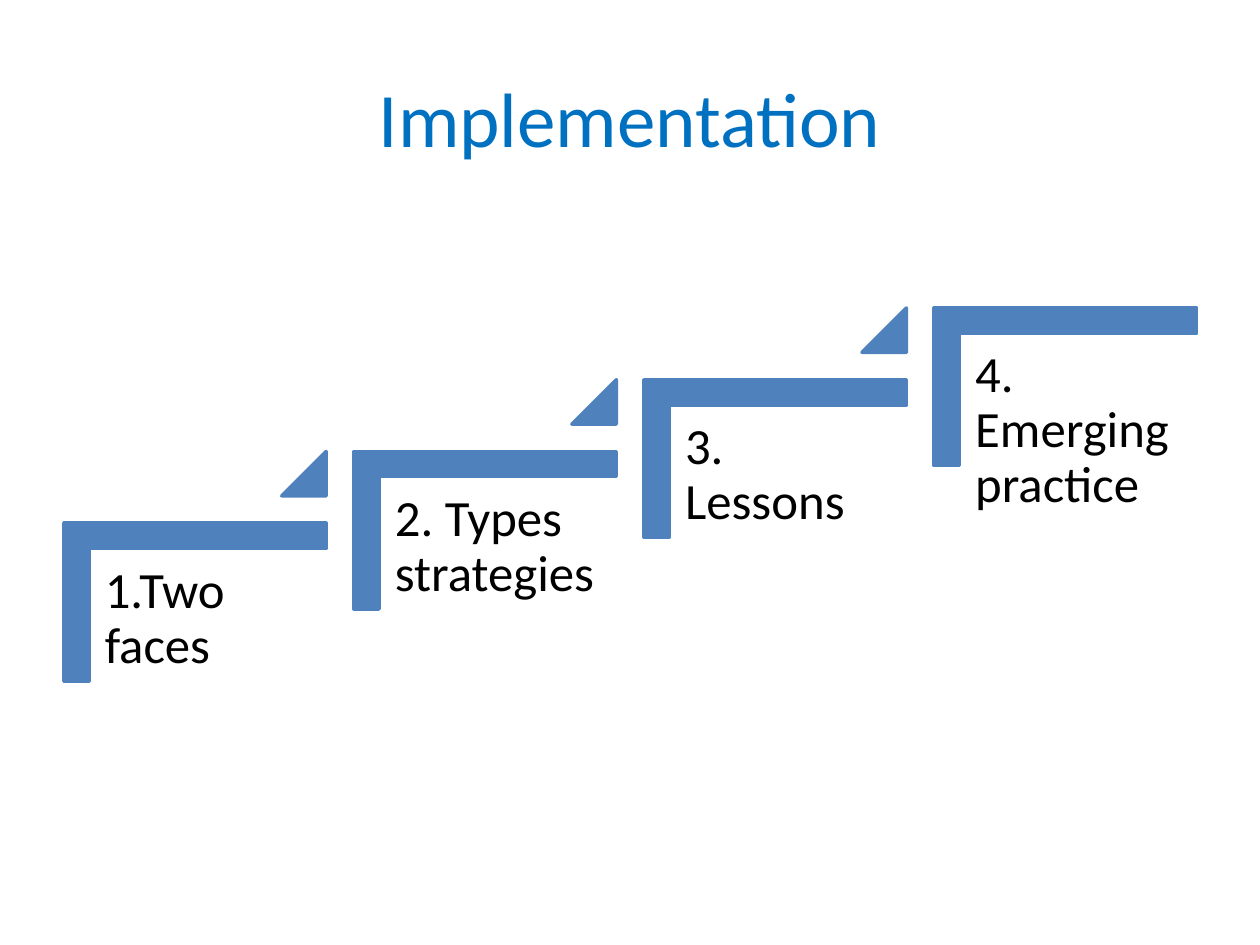
from pptx import Presentation
from pptx.dml.color import RGBColor
from pptx.enum import shapes, text
from pptx.util import Pt

COLORS = {"title": "0070C0", "step": "4F81BD", "label": "000000"}
STEPS = ["1.Two faces", "2. Types strategies", "3. Lessons", "4. Emerging practice"]


def add_text(s, words, x, y, w, h, size, color, inset):
    tf = s.shapes.add_textbox(Pt(x), Pt(y), Pt(w), Pt(h)).text_frame
    tf.word_wrap = True
    tf.margin_left = tf.margin_right = tf.margin_top = tf.margin_bottom = Pt(inset)
    p = tf.paragraphs[0]
    p.text = words
    p.font.name = "Calibri"
    p.font.size = Pt(size)
    p.font.color.rgb = RGBColor.from_string(COLORS[color])
    return tf


def add_solid(s, kind, x, y, w, h, adjustments):
    sp = s.shapes.add_shape(kind, Pt(x), Pt(y), Pt(w), Pt(h))
    sp.shadow.inherit = False
    color = RGBColor.from_string(COLORS["step"])
    sp.fill.solid()
    sp.fill.fore_color.rgb = color
    sp.line.color.rgb = color
    sp.line.width = Pt(2)
    for i, value in enumerate(adjustments):
        sp.adjustments[i] = value
    return sp


def add_title(s, x, y, w, h):
    tf = add_text(s, "Implementation", x, y, w, h, 44, "title", 3.6)
    tf.vertical_anchor = text.MSO_ANCHOR.MIDDLE
    tf.paragraphs[0].alignment = text.PP_ALIGN.CENTER


def add_step(s, words, x, y, w, h, rise, last):
    offset = (w - h) / 2
    corner = add_solid(s, shapes.MSO_SHAPE.CORNER, x + offset, y - offset, h, w,
                       [0.16, 0.16])
    corner.rotation = 90
    tf = add_text(s, words, x + 14.8, y + 14.8, w - 14.4, 118.8, 29, "label", 8.7)
    tf.paragraphs[0].line_spacing = 0.9
    if not last:
        side = 25.4
        add_solid(s, shapes.MSO_SHAPE.ISOSCELES_TRIANGLE, x + w - side, y - rise,
                  side, side, [1])


def add_staircase(s, x, y, step_w, step_h, run, rise):
    for i, words in enumerate(STEPS):
        add_step(s, words, x + i * run, y - i * rise, step_w, step_h, rise,
                 i == len(STEPS) - 1)


def main():
    prs = Presentation()
    prs.slide_width, prs.slide_height = Pt(720), Pt(540)
    s = prs.slides.add_slide(prs.slide_layouts[6])
    add_title(s, 36, 21.6, 648, 90)
    add_staircase(s, 36.4, 299, 150, 90, 165.8, 41)
    prs.save("out.pptx")


if __name__ == "__main__":
    main()
